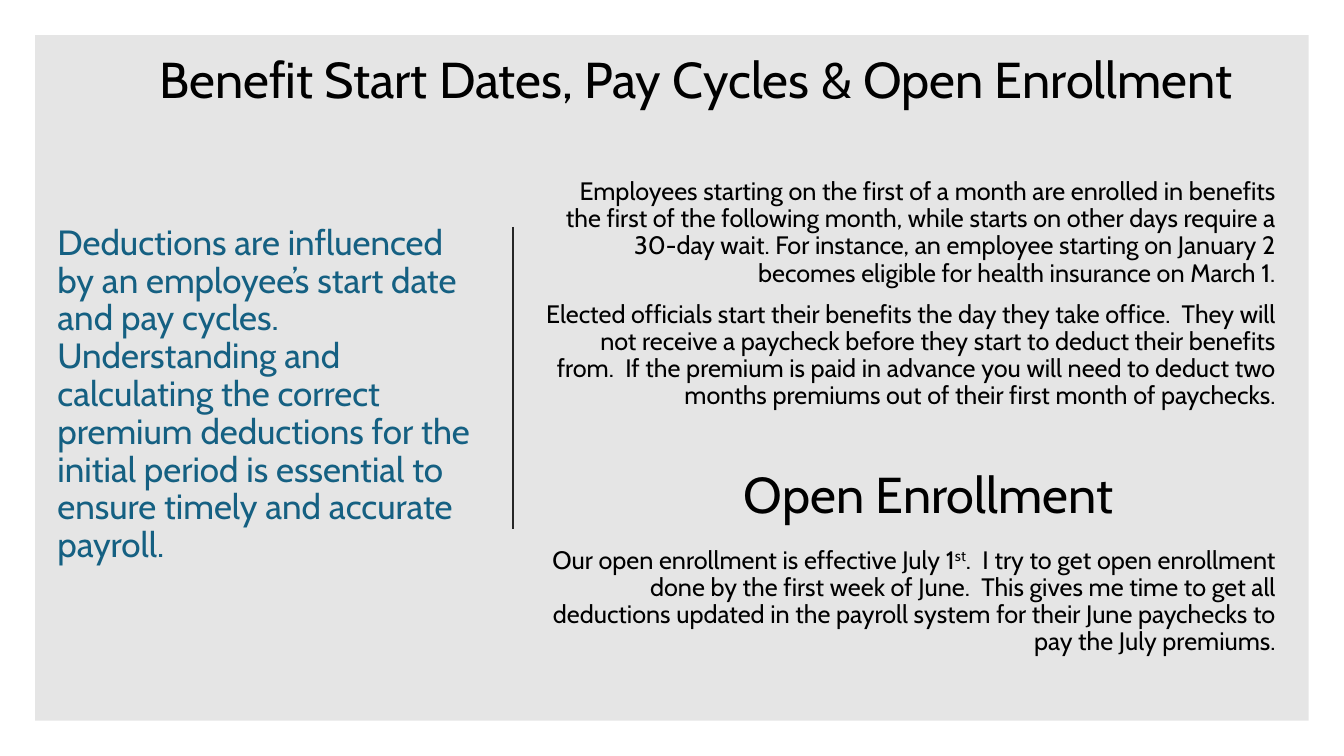
from dataclasses import dataclass
from pptx import Presentation
from pptx.dml.color import RGBColor
from pptx.enum.shapes import MSO_CONNECTOR, MSO_SHAPE
from pptx.enum.text import MSO_ANCHOR, MSO_AUTO_SIZE, PP_ALIGN
from pptx.oxml.ns import qn
from pptx.util import Inches, Pt
from lxml import etree

RECT, LINE = MSO_SHAPE.RECTANGLE, MSO_CONNECTOR.STRAIGHT
TOP, MIDDLE, BOTTOM = MSO_ANCHOR.TOP, MSO_ANCHOR.MIDDLE, MSO_ANCHOR.BOTTOM
LEFT, RIGHT = PP_ALIGN.LEFT, PP_ALIGN.RIGHT
NO_FIT = MSO_AUTO_SIZE.NONE


@dataclass(frozen=True)
class Theme:
    face: str = "Cabin"
    black: RGBColor = RGBColor(0, 0, 0)
    blue: RGBColor = RGBColor(0x15, 0x60, 0x82)
    rule: RGBColor = RGBColor(0x26, 0x26, 0x26)
    head: Pt = Pt(36)
    lead: Pt = Pt(25)
    body: Pt = Pt(18)


THEME = Theme()
LEAD = ("Deductions are influenced by an employee’s start date and pay cycles. "
        "Understanding and calculating the correct premium deductions for the "
        "initial period is essential to ensure timely and accurate payroll.")
START = [
    ["Employees starting on the first of a month are enrolled in benefits the "
     "first of the following month, while starts on other days require a 30-day "
     "wait. For instance, an employee starting on January 2 becomes eligible "
     "for health insurance on March 1."],
    ["Elected officials start their benefits the day they take office.  They "
     "will not receive a paycheck before they start to deduct their benefits "
     "from.  If the premium is paid in advance you will need to deduct two "
     "months premiums out of their first month of paychecks."],
]
# The second run of a paragraph is raised
OPEN = [
    ["Our open enrollment is effective July 1", "st",
     ".  I try to get open enrollment done by the first week of June.  This "
     "gives me time to get all deductions updated in the payroll system for "
     "their June paychecks to pay the July premiums."],
]


def place(shape, box):
    for name, size in zip(("left", "top", "width", "height"), box):
        setattr(shape, name, Inches(size))


def write(shape, paras, size, color, anchor=TOP, **form):
    frame = shape.text_frame
    frame.word_wrap = True
    frame.auto_size = NO_FIT
    frame.vertical_anchor = anchor
    for i, runs in enumerate(paras):
        para = frame.add_paragraph() if i else frame.paragraphs[0]
        for key, value in form.items():
            setattr(para, key, value)
        for j, text in enumerate(runs):
            run = para.add_run()
            run.text = text
            look = {"name": THEME.face, "size": size}
            for key, value in look.items():
                setattr(run.font, key, value)
            run.font.color.rgb = color
            if j == 1:
                run.font._element.set("baseline", "30000")


def add_text(slide, box, *args, **form):
    shape = slide.shapes.add_textbox(*map(Inches, box))
    write(shape, *args, **form)


def add_panel(slide, box):
    panel = slide.shapes.add_shape(RECT, *map(Inches, box))
    panel.shadow.inherit = False
    panel.line.fill.background()
    panel.fill.solid()
    panel.fill.fore_color.rgb = THEME.black
    tint = panel._element.spPr.find(".//" + qn("a:srgbClr"))
    etree.SubElement(tint, qn("a:alpha")).set("val", "10000")
    # Keep the panel behind the title
    tree = slide.shapes._spTree
    tree.remove(panel._element)
    tree.insert(2, panel._element)


def add_lead(slide, box):
    title = slide.shapes.title
    place(title, box)
    write(title, [[LEAD]], THEME.lead, THEME.blue, MIDDLE,
          alignment=LEFT, line_spacing=0.9)


def add_rule(slide, box):
    x, y, _, high = box
    rule = slide.shapes.add_connector(
        LINE, Inches(x), Inches(y), Inches(x), Inches(y + high))
    rule.line.color.rgb = THEME.rule
    rule.line.width = Pt(1.5)
    etree.SubElement(rule._element.spPr, qn("a:effectLst"))


def add_notes(slide, box):
    x, y, wide, _ = box
    form = {"alignment": RIGHT, "line_spacing": 0.9, "space_before": Pt(10)}
    # Start dates
    add_text(slide, (x, y, wide, 2.52), START, THEME.body, THEME.black,
             BOTTOM, **form)
    # Open enrollment
    add_text(slide, (x + 1.99, y + 2.94, 3.98, 0.71),
             [["Open Enrollment"]], THEME.head, THEME.black)
    add_text(slide, (x, y + 3.78, wide, 1.31), OPEN, THEME.body, THEME.black,
             **form)


def main():
    deck = Presentation()
    deck.slide_width, deck.slide_height = Inches(13.33), Inches(7.5)
    slide = deck.slides.add_slide(deck.slide_layouts[5])
    add_panel(slide, (0.35, 0.35, 12.63, 6.8))
    add_lead(slide, (0.47, 1.33, 4.45, 5.18))
    add_rule(slide, (5.09, 2.25, 0, 3))
    add_notes(slide, (5.29, 1.6, 7.46, 5.09))
    # Slide heading
    add_text(slide, (1.48, 0.43, 11.38, 0.71),
             [["Benefit Start Dates, Pay Cycles & Open Enrollment"]],
             THEME.head, THEME.black)
    deck.save("out.pptx")


if __name__ == "__main__":
    main()
